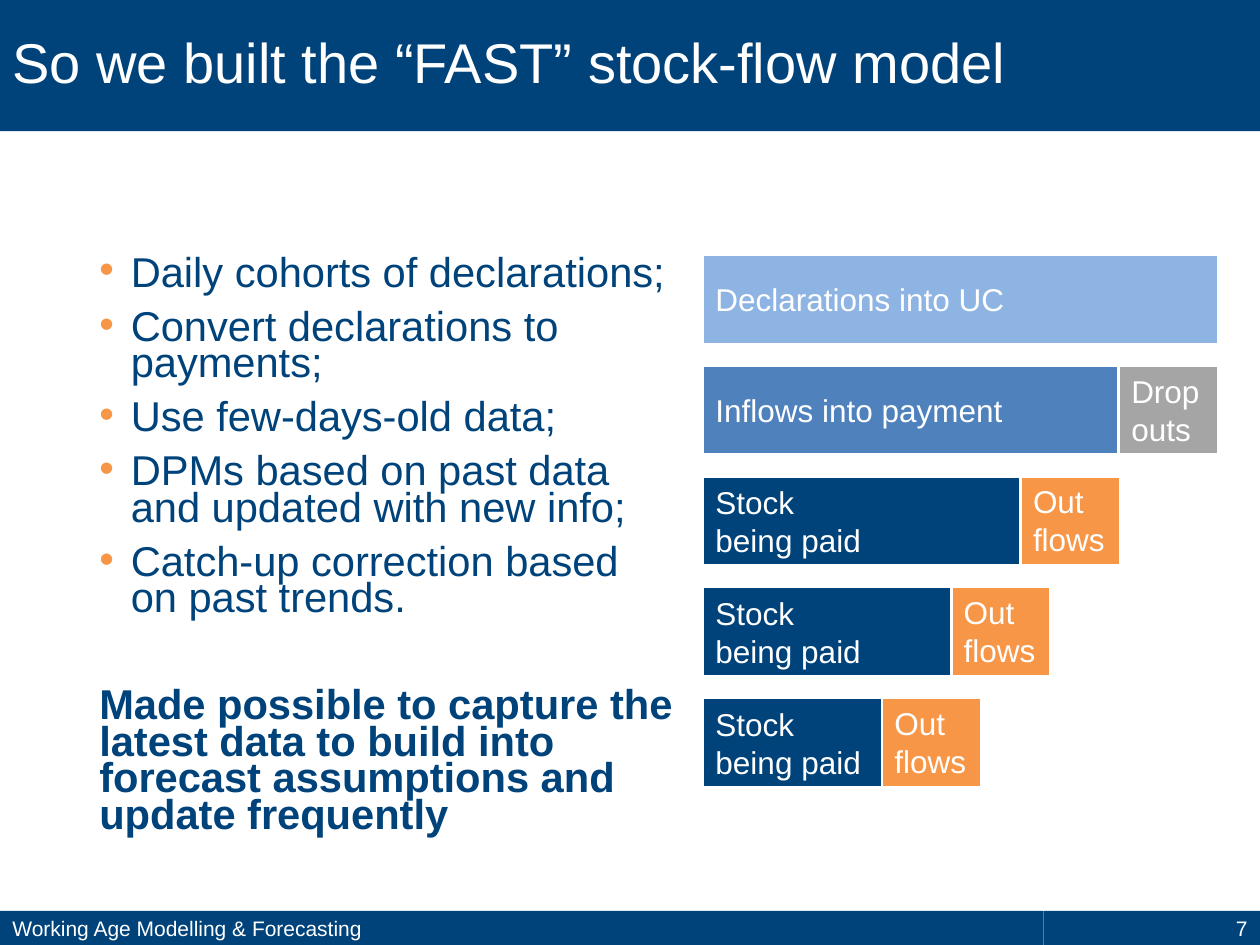
from lxml.etree import SubElement
from pptx import Presentation
from pptx.dml.color import RGBColor
from pptx.enum.shapes import MSO_SHAPE as Shape
from pptx.enum.text import MSO_ANCHOR as Anchor, MSO_AUTO_SIZE as AutoSize, PP_ALIGN as Align
from pptx.oxml.ns import qn
from pptx.util import Inches, Pt

NAVY = RGBColor(0x00, 0x43, 0x7B)
BLUE = RGBColor(0x4F, 0x81, 0xBD)
SKY = RGBColor(0x8E, 0xB4, 0xE3)
GREY = RGBColor(0xA5, 0xA5, 0xA5)
ORANGE = RGBColor(0xF7, 0x96, 0x46)
WHITE = RGBColor(0xFF, 0xFF, 0xFF)

HEADING = "So we built the “FAST” stock-flow model"
POINTS = [
    "Daily cohorts of declarations;",
    "Convert declarations to payments;",
    "Use few-days-old data;",
    "DPMs based on past data and updated with new info;",
    "Catch-up correction based on past trends.",
]
CONCLUSION = ("Made possible to capture the latest data to build into "
              "forecast assumptions and update frequently")
FOOTER = [
    ("Working Age Modelling & Forecasting", 8.28, Align.LEFT),
    ("7", 1.72, Align.RIGHT),
]
EXIT_WIDTH = 0.79
OUTFLOW = ("Out\nflows", EXIT_WIDTH, ORANGE, Anchor.TOP)
FLOW_ROWS = [
    [("Declarations into UC", 4.09, SKY, Anchor.MIDDLE)],
    [("Inflows into payment", 3.3, BLUE, Anchor.MIDDLE),
     ("Drop\nouts", EXIT_WIDTH, GREY, Anchor.MIDDLE)],
    [("Stock\nbeing paid", 2.52, NAVY, Anchor.MIDDLE), OUTFLOW],
    [("Stock\nbeing paid", 1.97, NAVY, Anchor.MIDDLE), OUTFLOW],
    [("Stock being paid", 1.42, NAVY, Anchor.MIDDLE), OUTFLOW],
]
FLOW_LEFT, FLOW_TOP, FLOW_HEIGHT, FLOW_PITCH = 5.58, 2.02, 0.71, 0.88


def set_attributes(target, values):
    for name, value in values.items():
        setattr(target, name, value)


def write(paragraph, text, size, color, bold=False):
    run = paragraph.add_run()
    run.text = text
    set_attributes(run.font, {"name": "Arial", "size": Pt(size), "bold": bold})
    run.font.color.rgb = color


def add_block(slide, box, text, size, fill, align=Align.LEFT, anchor=Anchor.MIDDLE, outlined=False):
    block = slide.shapes.add_shape(Shape.RECTANGLE, *map(Inches, box))
    block.shadow.inherit = False
    block.fill.solid()
    block.fill.fore_color.rgb = fill
    if outlined:
        block.line.color.rgb = WHITE
        block.line.width = Pt(1.5)
    else:
        block.line.fill.background()
    frame = block.text_frame
    set_attributes(frame, {"word_wrap": True, "vertical_anchor": anchor})
    for index, line in enumerate(text.split("\n")):
        paragraph = frame.add_paragraph() if index else frame.paragraphs[0]
        paragraph.alignment = align
        write(paragraph, line, size, WHITE)


def add_bullet(paragraph):
    properties = paragraph._p.get_or_add_pPr()
    properties.set("marL", str(Inches(0.25)))
    properties.set("indent", str(Inches(-0.25)))
    bullet_color = SubElement(properties, qn("a:buClr"))
    SubElement(bullet_color, qn("a:srgbClr"), val=str(ORANGE))
    SubElement(properties, qn("a:buFont"), typeface="Arial")
    SubElement(properties, qn("a:buChar"), char="•")


def add_heading(slide):
    heading = slide.shapes.title
    set_attributes(heading, {"left": 0, "top": 0, "width": Inches(10), "height": Inches(1.04)})
    heading.fill.solid()
    heading.fill.fore_color.rgb = NAVY
    set_attributes(heading.text_frame, {
        "word_wrap": True, "vertical_anchor": Anchor.MIDDLE, "auto_size": AutoSize.NONE})
    paragraph = heading.text_frame.paragraphs[0]
    set_attributes(paragraph, {"alignment": Align.LEFT, "line_spacing": 0.9})
    write(paragraph, HEADING, 32, WHITE)


def add_points(slide):
    frame = slide.shapes.add_textbox(*map(Inches, (0.69, 2, 4.77, 4.76))).text_frame
    frame.word_wrap = True
    for index, text in enumerate(POINTS + [CONCLUSION]):
        paragraph = frame.add_paragraph() if index else frame.paragraphs[0]
        concluding = text == CONCLUSION
        set_attributes(paragraph, {
            "line_spacing": 0.73, "space_before": Pt(40 if concluding else 10)})
        if not concluding:
            add_bullet(paragraph)
        write(paragraph, text, 23.8, NAVY, concluding)


def add_footer(slide):
    left = 0
    for text, width, align in FOOTER:
        add_block(slide, (left, 7.23, width, 0.27), text, 12, NAVY, align)
        left += width


def add_flows(slide):
    for row, blocks in enumerate(FLOW_ROWS):
        left = FLOW_LEFT
        for text, width, fill, anchor in blocks:
            box = (left, FLOW_TOP + row * FLOW_PITCH, width, FLOW_HEIGHT)
            add_block(slide, box, text, 18, fill, anchor=anchor, outlined=True)
            left += width


def main():
    deck = Presentation()
    set_attributes(deck, {"slide_width": Inches(10), "slide_height": Inches(7.5)})
    slide = deck.slides.add_slide(deck.slide_layouts[5])
    add_heading(slide)
    add_points(slide)
    add_footer(slide)
    add_flows(slide)
    deck.save("out.pptx")


if __name__ == "__main__":
    main()
